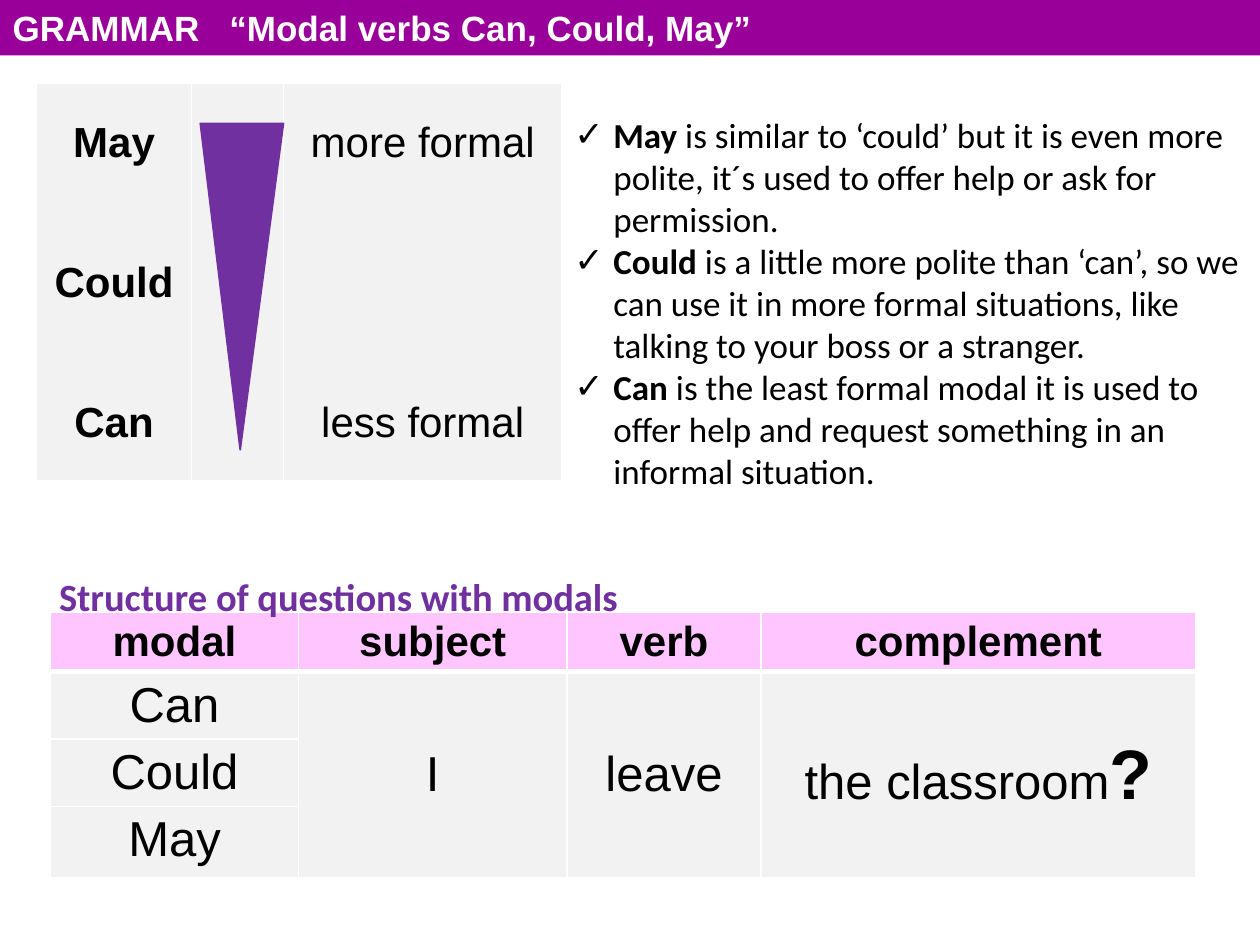
"""Build a grammar slide about the modal verbs can, could and may."""
from lxml import etree
from pptx import Presentation
from pptx.dml.color import RGBColor
from pptx.enum.shapes import MSO_SHAPE
from pptx.enum.text import MSO_ANCHOR, MSO_AUTO_SIZE, PP_ALIGN
from pptx.oxml.ns import qn
from pptx.util import Inches, Pt

TRIANGLE = MSO_SHAPE.ISOSCELES_TRIANGLE
MIDDLE, TOP = MSO_ANCHOR.MIDDLE, MSO_ANCHOR.TOP
LEFT, CENTER = PP_ALIGN.LEFT, PP_ALIGN.CENTER
NO_RESIZE = MSO_AUTO_SIZE.NONE
COLORS = {"bar": "990099", "accent": "7030A0", "header": "FFC5FF",
          "cell": "F2F2F2", "white": "FFFFFF", "black": "000000"}
FORMATS = {
    "title": {"name": "Arial", "size": Pt(20), "bold": True, "color": "white"},
    "heading": {"name": "Calibri", "size": Pt(22), "bold": True, "color": "accent"},
    "note": {"name": "Calibri", "size": Pt(20), "bold": False, "color": "black"},
    "term": {"name": "Calibri", "size": Pt(20), "bold": True, "color": "black"},
    "label": {"name": "Arial", "size": Pt(24), "bold": True, "color": "black"},
    "scale": {"name": "Arial", "size": Pt(24), "bold": False, "color": "black"},
    "word": {"name": "Arial", "size": Pt(28), "bold": False, "color": "black"},
    "mark": {"name": "Arial", "size": Pt(40), "bold": True, "color": "black"},
}


class SlideBuilder:
    """Hold the style and the current slide, and add elements to it."""

    def __init__(self, deck):
        self.page = deck.slides.add_slide(deck.slide_layouts[5])

    def color(self, name):
        return RGBColor.from_string(COLORS[name])

    def paint(self, item, name):
        item.fill.solid()
        item.fill.fore_color.rgb = self.color(name)

    def add_spans(self, para, spans, align=LEFT):
        para.alignment = align
        for text, style in spans:
            span = para.add_run()
            span.text = text
            for key, value in FORMATS[style].items():
                if key == "color":
                    span.font.color.rgb = self.color(value)
                else:
                    setattr(span.font, key, value)

    def title(self, text, area, tab):
        box = self.page.shapes.title
        box.left, box.top, box.width, box.height = map(Inches, area)
        self.paint(box, "bar")
        frame = box.text_frame
        frame.auto_size, frame.vertical_anchor = NO_RESIZE, MIDDLE
        para = frame.paragraphs[0]
        tabs = etree.SubElement(para._p.get_or_add_pPr(), qn("a:tabLst"))
        etree.SubElement(tabs, qn("a:tab"), pos=str(Inches(tab)), algn="l")
        self.add_spans(para, [(text, "title")])

    def textbox(self, lines, area, bullet=None, indent=0.31):
        frame = self.page.shapes.add_textbox(*map(Inches, area)).text_frame
        frame.word_wrap = True
        for index, spans in enumerate(lines):
            para = frame.add_paragraph() if index else frame.paragraphs[0]
            if bullet:
                properties = para._p.get_or_add_pPr()
                properties.set("marL", str(Inches(indent)))
                properties.set("indent", str(-Inches(indent)))
                etree.SubElement(properties, qn("a:buFont"), typeface="Arial")
                etree.SubElement(properties, qn("a:buChar"), char=bullet)
            self.add_spans(para, spans)

    def wedge(self, area, tip):
        shape = self.page.shapes.add_shape(TRIANGLE, *map(Inches, area))
        shape.shadow.inherit = False
        shape.adjustments[0] = tip
        shape._element.spPr.xfrm.set("flipV", "1")
        self.paint(shape, "accent")
        shape.line.color.rgb = self.color("accent")
        shape.line.width = Pt(1)

    def table(self, area, widths, heights):
        grid = self.page.shapes.add_table(len(heights), len(widths), *map(Inches, area)).table
        grid.first_row = grid.horz_banding = False
        for column, width in zip(grid.columns, widths):
            column.width = Inches(width)
        for row, height in zip(grid.rows, heights):
            row.height = Inches(height)
        return grid

    def cell(self, cell, fill, lines=(), anchor=TOP, gap=0, top=1, bottom=1):
        self.paint(cell, fill)
        cell.vertical_anchor = anchor
        properties = cell._tc.get_or_add_tcPr()
        for index, (side, width) in enumerate(zip("LRTB", (1, 1, top, bottom))):
            line = etree.Element(qn(f"a:ln{side}"), w=str(Pt(width)))
            solid = etree.SubElement(line, qn("a:solidFill"))
            etree.SubElement(solid, qn("a:srgbClr"), val=COLORS["white"])
            properties.insert(index, line)
        for index, spans in enumerate(lines):
            para = cell.text_frame.add_paragraph() if index else cell.text_frame.paragraphs[0]
            if index:
                para.space_before = Pt(gap)
            self.add_spans(para, spans, CENTER)


def main():
    deck = Presentation()
    deck.slide_width, deck.slide_height = Inches(10), Inches(7.5)
    slide = SlideBuilder(deck)
    slide.title("GRAMMAR\t“Modal verbs Can, Could, May”", (0, 0, 10, 0.44), 1.72)

    questions = slide.table((0.4, 4.86, 9.09, 1.89), (1.97, 2.13, 1.54, 3.45),
                            (0.44, 0.44, 0.44, 0.57))
    for column, text in enumerate(("modal", "subject", "verb", "complement")):
        slide.cell(questions.cell(0, column), "header", [[(text, "label")]], bottom=3)
    for row, text in enumerate(("Can", "Could", "May"), 1):
        top = 3 if row == 1 else 1
        slide.cell(questions.cell(row, 0), "cell", [[(text, "word")]], top=top)
    shared = ([("I", "word")], [("leave", "word")],
              [("the classroom", "word"), ("?", "mark")])
    for column, spans in enumerate(shared, 1):
        questions.cell(1, column).merge(questions.cell(3, column))
        slide.cell(questions.cell(1, column), "cell", [spans], MIDDLE, top=3)
        for row in (2, 3):
            slide.cell(questions.cell(row, column), "cell")

    slide.textbox([[("Structure of questions with modals", "heading")]],
                  (0.37, 4.5, 5.42, 0.47))

    formality = slide.table((0.29, 0.66, 4.17, 3.17), (1.23, 0.73, 2.21), (3.17,))
    modals = [[(text, "label")] for text in ("May", "Could", "Can")]
    scale = [[(text, "scale")] for text in ("more formal", "less formal")]
    for column, (lines, gap) in enumerate(((modals, 53), ((), 0), (scale, 133))):
        slide.cell(formality.cell(0, column), "cell", lines, MIDDLE, gap, bottom=3)
    slide.wedge((1.59, 0.98, 0.66, 2.59), 0.48)

    notes = (
        ("May", " is similar to ‘could’ but it is even more polite, "
                "it´s used to offer help or ask for permission."),
        ("Could", " is a little more polite than ‘can’, so we can use it in more "
                  "formal situations, like talking to your boss or a stranger."),
        ("Can", " is the least formal modal it is used to offer help and "
                "request something in an informal situation."),
    )
    slide.textbox([[(term, "term"), (text, "note")] for term, text in notes],
                  (4.46, 0.85, 5.52, 3.13), bullet="✓")
    deck.save("out.pptx")


if __name__ == "__main__":
    main()
